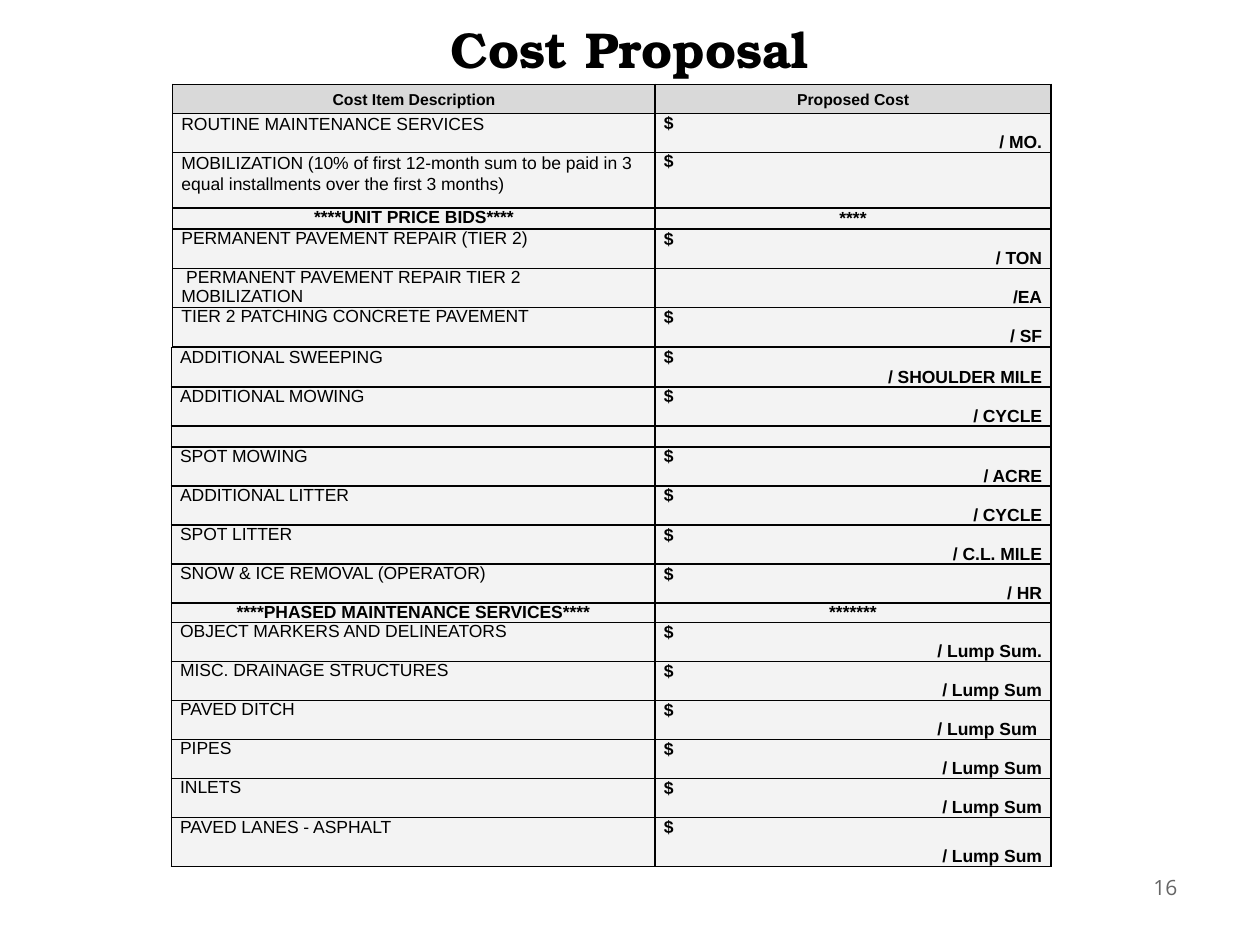
import pptx
import pptx.util
import pptx.dml.color
import pptx.enum.text
import pptx.oxml.ns
from lxml import etree

Inches = pptx.util.Inches
Pt = pptx.util.Pt
ALIGN = pptx.enum.text.PP_ALIGN
ANCHOR = pptx.enum.text.MSO_ANCHOR
COLORS = {"ink": "000000", "head": "D9D9D9", "body": "F3F3F3", "page": "666666"}
TALL, THIN = 0.31, 0.15
PITCH = Pt(11)  # two lines fit a tall row, one fits a thin row

# Each row: kind, description, cost unit, height
BASE = [
    ("head", "Cost Item Description", "Proposed Cost", 0.23),
    ("item", "ROUTINE MAINTENANCE SERVICES", "/ MO.", TALL),
    ("item", "MOBILIZATION (10% of first 12-month sum to be paid in 3 "
     "equal installments over the first 3 months)", "", 0.44),
    ("band", "****UNIT PRICE BIDS****", "****", 0.17),
    ("item", "PERMANENT PAVEMENT REPAIR (TIER 2)", "/ TON", TALL),
    ("each", " PERMANENT PAVEMENT REPAIR TIER 2 MOBILIZATION", "/EA", TALL),
    ("item", "TIER 2 PATCHING CONCRETE PAVEMENT", "/ SF", TALL),
]
EXTRA = [
    ("item", "ADDITIONAL SWEEPING", "/ SHOULDER MILE", TALL),
    ("item", "ADDITIONAL MOWING", "/ CYCLE", TALL),
    ("band", "", "", THIN),
    ("item", "SPOT MOWING", "/ ACRE", TALL),
    ("item", "ADDITIONAL LITTER", "/ CYCLE", TALL),
    ("item", "SPOT LITTER", "/ C.L. MILE", TALL),
    ("item", "SNOW & ICE REMOVAL (OPERATOR)", "/ HR", TALL),
    ("band", "****PHASED MAINTENANCE SERVICES****", "*******", THIN),
    ("item", "OBJECT MARKERS AND DELINEATORS", "/ Lump Sum.", TALL),
    ("item", "MISC. DRAINAGE STRUCTURES", "/ Lump Sum", TALL),
    ("item", "PAVED DITCH", "/ Lump Sum ", TALL),
    ("item", "PIPES", "/ Lump Sum", TALL),
    ("item", "INLETS", "/ Lump Sum", TALL),
    ("last", "PAVED LANES - ASPHALT", "/ Lump Sum", 0.39),
]


def rgb(name):
    return pptx.dml.color.RGBColor.from_string(COLORS[name])


def write(frame, text, more=False, size=10, font="Arial", color="ink",
          bold=False, align=ALIGN.LEFT, line=PITCH, before=0):
    """Fill the first paragraph, or add one when more is set."""
    para = frame.add_paragraph() if more else frame.paragraphs[0]
    para.alignment = align
    para.line_spacing = line
    if before:
        para.space_before = Pt(before)
    if not text:
        para.font.size = Pt(size)
        return
    run = para.add_run()
    run.text = text
    run.font.size, run.font.name, run.font.bold = Pt(size), font, bold
    run.font.color.rgb = rgb(color)


def label(slide, box, text, **form):
    frame = slide.shapes.add_textbox(*map(Inches, box)).text_frame
    frame.margin_left = frame.margin_right = 0
    frame.margin_top = frame.margin_bottom = 0
    frame.word_wrap = True
    frame.vertical_anchor = ANCHOR.MIDDLE
    write(frame, text, align=ALIGN.CENTER, line=None, **form)


def dress(cell, fill, anchor):
    """Set fill, margins, anchor and black borders of a cell."""
    cell.margin_left = cell.margin_right = Inches(0.07)
    cell.margin_top = cell.margin_bottom = 0
    cell.vertical_anchor = anchor
    cell.fill.solid()
    cell.fill.fore_color.rgb = rgb(fill)
    props = cell._tc.get_or_add_tcPr()
    qn = pptx.oxml.ns.qn
    for spot, side in enumerate(("a:lnL", "a:lnR", "a:lnT", "a:lnB")):
        edge = etree.Element(qn(side), w=str(Pt(1)))
        paint = etree.SubElement(edge, qn("a:solidFill"))
        etree.SubElement(paint, qn("a:srgbClr"), val=COLORS["ink"])
        props.insert(spot, edge)


def fill_row(cells, kind, item, cost, line):
    left, right = cells
    mid = kind in ("head", "band")
    fill = "head" if kind == "head" else "body"
    dress(left, fill, ANCHOR.MIDDLE if kind == "head" else ANCHOR.TOP)
    dress(right, fill, ANCHOR.MIDDLE if mid else
          ANCHOR.BOTTOM if cost else ANCHOR.TOP)
    if mid:
        size = 9 if kind == "head" else 10
        for cell, text in ((left, item), (right, cost)):
            write(cell.text_frame, text, size=size, bold=True, align=ALIGN.CENTER)
        return
    left.margin_right = Inches(0.09)
    write(left.text_frame, item, line=line)
    priced = kind != "each"
    if priced:
        write(right.text_frame, "$", bold=True)
    if cost:
        write(right.text_frame, cost, more=priced, bold=True, align=ALIGN.RIGHT,
              before=6 if kind == "last" else 0)


def price_table(slide, box, widths, rows, loose=0):
    """Draw a price table; the first loose rows have wider line spacing."""
    table = slide.shapes.add_table(len(rows), 2, *map(Inches, box)).table
    table.first_row = table.horz_banding = False
    for col, width in zip(table.columns, widths):
        col.width = Inches(width)
    for num, (kind, item, cost, height) in enumerate(rows):
        table.rows[num].height = Inches(height)
        fill_row(table.rows[num].cells, kind, item, cost,
                 1.07 if num < loose else PITCH)


def main():
    deck = pptx.Presentation()
    deck.slide_width, deck.slide_height = Inches(10), Inches(7.5)
    slide = deck.slides.add_slide(deck.slide_layouts[6])
    label(slide, (0.5, 0.17, 9, 0.42), "Cost Proposal", size=28.8,
          font="TeX Gyre Bonum", bold=True)
    price_table(slide, (1.37, 0.67, 6.97, 2.08), (3.83, 3.14), BASE, loose=3)
    price_table(slide, (1.36, 2.76, 6.98, 4.1), (3.84, 3.14), EXTRA)
    label(slide, (9, 6.83, 0.5, 0.42), "16", size=12, font="Open Sans",
          color="page")
    deck.save("out.pptx")


if __name__ == "__main__":
    main()
